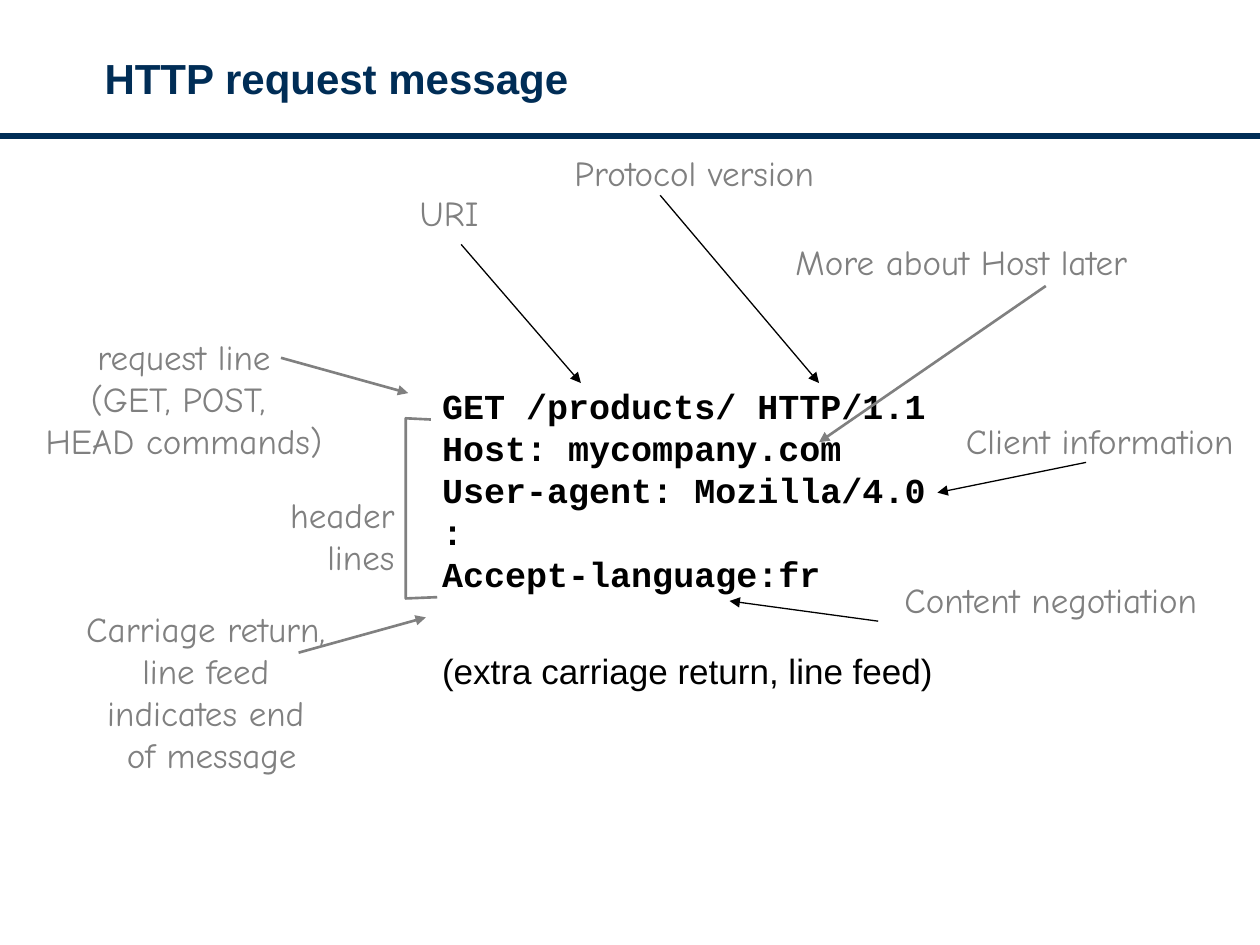
from dataclasses import dataclass

from lxml import etree
from pptx import Presentation
from pptx.dml.color import RGBColor
from pptx.enum.shapes import MSO_CONNECTOR, MSO_SHAPE
from pptx.enum.text import MSO_ANCHOR, MSO_AUTO_SIZE, PP_ALIGN
from pptx.oxml.ns import qn
from pptx.util import Emu, Inches, Pt

LEFT, CENTER, RIGHT = PP_ALIGN.LEFT, PP_ALIGN.CENTER, PP_ALIGN.RIGHT
TOP, MIDDLE = MSO_ANCHOR.TOP, MSO_ANCHOR.MIDDLE
FIT = MSO_AUTO_SIZE.SHAPE_TO_FIT_TEXT
STRAIGHT = MSO_CONNECTOR.STRAIGHT
RECTANGLE = MSO_SHAPE.RECTANGLE

COLUMNS, ROWS = 100, 75
CELL = Inches(0.1)


@dataclass(frozen=True)
class Theme:
    navy: str = "002D56"
    gray: str = "808080"
    black: str = "000000"
    white: str = "FFFFFF"
    sans: str = "Arial"
    code: str = "Courier New"
    hand: str = "Comic Neue"
    title_size: float = 24
    text_size: float = 20
    leading: float = 24
    gap: float = 31
    rule: float = 3
    thick: float = 1.5
    thin: float = 0.75


THEME = Theme()


@dataclass(frozen=True)
class Area:
    column: float
    row: float
    columns: float
    rows: float


@dataclass(frozen=True)
class Label:
    area: Area
    lines: tuple[str, ...]
    align: PP_ALIGN = CENTER


@dataclass(frozen=True)
class Arrow:
    start: tuple[float, float]
    end: tuple[float, float]
    color: str = THEME.black
    width: float = THEME.thin


LABELS = (
    Label(Area(2.2, 26.1, 24.8, 11), ("request line", "(GET, POST, ", "HEAD commands)")),
    Label(Area(21.2, 38.7, 11.1, 7.7), ("header", "lines"), RIGHT),
    Label(Area(4.9, 47.7, 23.8, 14.3),
          ("Carriage return, ", "line feed ", "indicates end ", "of message")),
    Label(Area(60.7, 18.6, 31.2, 4.3), ("More about Host later",)),
    Label(Area(69.7, 45.4, 27.4, 4.3), ("Content negotiation",)),
    Label(Area(74.6, 32.8, 25.4, 4.3), ("Client information",)),
    Label(Area(32, 14.7, 7.3, 4.3), ("URI",)),
    Label(Area(43.7, 11.5, 22.8, 4.3), ("Protocol version",)),
)

ARROWS = (
    Arrow((22.3, 28.4), (32.4, 31.2), THEME.gray, THEME.thick),
    Arrow((23.7, 51.8), (33.8, 49), THEME.gray, THEME.thick),
    Arrow((83, 22.7), (65, 35.1), THEME.gray, THEME.thick),
    Arrow((69.7, 49.3), (57.9, 47.7)),
    Arrow((86.2, 36.7), (74.4, 39.1)),
    Arrow((36.6, 19.4), (46.1, 30.4)),
    Arrow((52.4, 15.5), (65, 30.4)),
)

BRACKET = ((34.2, 33.3), (32.2, 33.2), (32.2, 47.5), (34.7, 47.4))

REQUEST = (
    "GET /products/ HTTP/1.1",
    "Host: mycompany.com",
    "User-agent: Mozilla/4.0",
    ":",
    "Accept-language:fr",
)


def cells(count: float) -> Emu:
    return Emu(round(count * CELL))


def place(area: Area) -> tuple[Emu, Emu, Emu, Emu]:
    return cells(area.column), cells(area.row), cells(area.columns), cells(area.rows)


def paint_line(line, color: str, width: float) -> None:
    line.color.rgb = RGBColor.from_string(color)
    line.width = Pt(width)


def write(frame, text: str, *, font: str, color: str, size: float = THEME.text_size,
          bold: bool = False, align: PP_ALIGN = LEFT, leading: float = THEME.leading,
          before: float = 0, first: bool = False) -> None:
    para = frame.paragraphs[0] if first else frame.add_paragraph()
    para.alignment = align
    para.line_spacing = Pt(leading)
    if before:
        para.space_before = Pt(before)
    span = para.add_run()
    span.text = text
    span.font.name = font
    span.font.size = Pt(size)
    span.font.bold = bold
    span.font.color.rgb = RGBColor.from_string(color)


def draw_line(page, arrow: Arrow, head: bool = True) -> None:
    connector = page.shapes.add_connector(
        STRAIGHT, *(cells(value) for value in arrow.start + arrow.end))
    paint_line(connector.line, arrow.color, arrow.width)
    properties = connector.element.spPr
    if head:
        etree.SubElement(properties.find(qn("a:ln")), qn("a:tailEnd"), type="triangle")
    etree.SubElement(properties, qn("a:effectLst"))


def draw_title(page) -> None:
    frame = page.shapes.add_textbox(*place(Area(8.3, 4.2, 85, 5.8))).text_frame
    frame.word_wrap = True
    frame.vertical_anchor = TOP
    frame.margin_left = frame.margin_top = frame.margin_right = frame.margin_bottom = 0
    write(frame, "HTTP request message", font=THEME.sans, color=THEME.navy,
          size=THEME.title_size, bold=True, leading=1.2 * THEME.title_size, first=True)


def draw_request(page) -> None:
    box = page.shapes.add_shape(RECTANGLE, *place(Area(34.1, 29.8, 44.2, 25.8)))
    box.shadow.inherit = False
    box.fill.solid()
    box.fill.fore_color.rgb = RGBColor.from_string(THEME.white)
    paint_line(box.line, THEME.white, THEME.thin)
    frame = box.text_frame
    frame.word_wrap = True
    frame.vertical_anchor = MIDDLE
    for index, text in enumerate(REQUEST):
        write(frame, text, font=THEME.code, color=THEME.black, bold=True, first=index == 0)
    write(frame, "(extra carriage return, line feed)", font=THEME.sans,
          color=THEME.black, before=THEME.gap)


def draw_label(page, label: Label) -> None:
    frame = page.shapes.add_textbox(*place(label.area)).text_frame
    frame.word_wrap = False
    frame.auto_size = FIT
    for index, text in enumerate(label.lines):
        write(frame, text, font=THEME.hand, color=THEME.gray, align=label.align,
              first=index == 0)


def draw_bracket(page) -> None:
    corners = [(cells(column), cells(row)) for column, row in BRACKET]
    builder = page.shapes.build_freeform(*corners[0])
    builder.add_line_segments(corners[1:], close=False)
    bracket = builder.convert_to_shape()
    bracket.shadow.inherit = False
    bracket.fill.background()
    paint_line(bracket.line, THEME.gray, THEME.thick)


def main() -> None:
    deck = Presentation()
    deck.slide_width, deck.slide_height = cells(COLUMNS), cells(ROWS)
    page = deck.slides.add_slide(deck.slide_layouts[6])
    draw_line(page, Arrow((0, 10.8), (COLUMNS, 10.8), THEME.navy, THEME.rule), head=False)
    draw_title(page)
    draw_request(page)
    draw_bracket(page)
    for label in LABELS:
        draw_label(page, label)
    for arrow in ARROWS:
        draw_line(page, arrow)
    deck.save("out.pptx")


if __name__ == "__main__":
    main()
